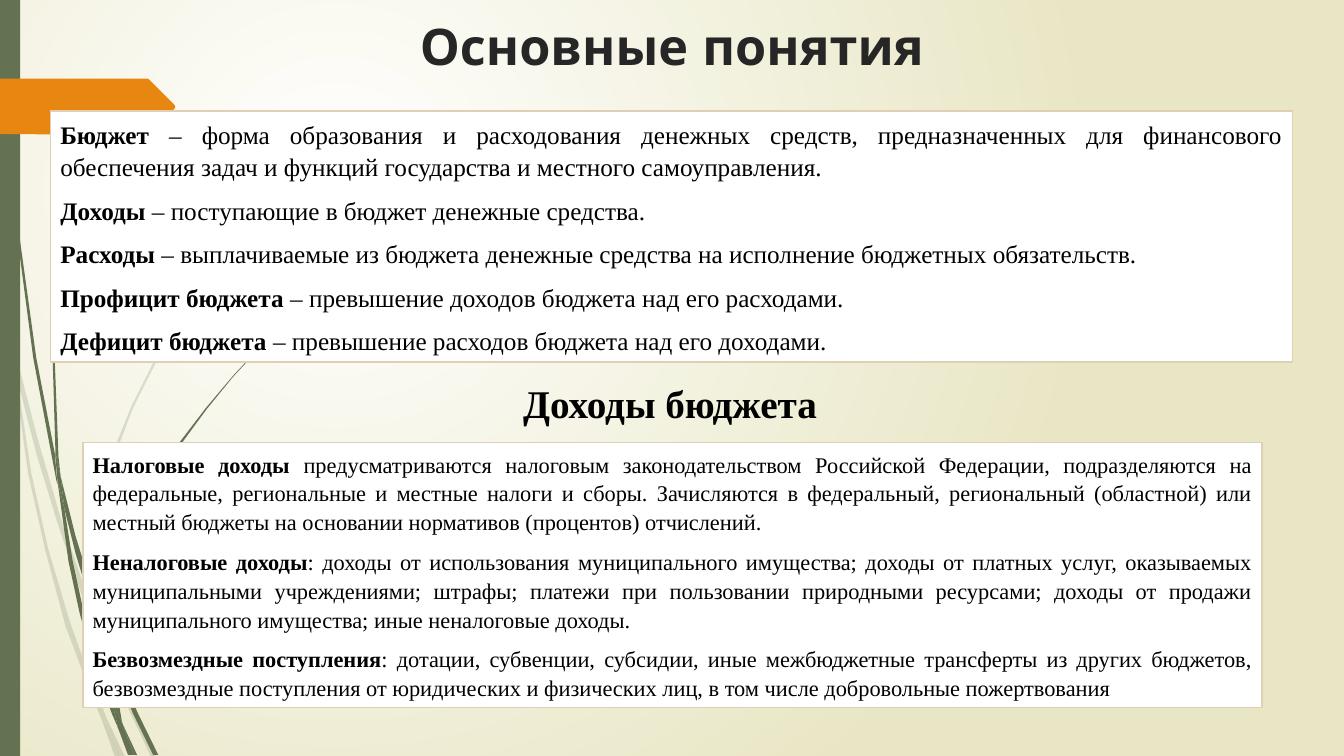
from pptx import Presentation
from pptx.dml.color import RGBColor
from pptx.enum.shapes import MSO_SHAPE
from pptx.enum.text import MSO_ANCHOR, MSO_AUTO_SIZE, PP_ALIGN
from pptx.oxml import parse_xml
from pptx.oxml.ns import nsdecls, qn
from pptx.util import Inches, Pt

COLUMNS, ROWS = 1333, 750

PALE_BLADES = [
    [(11, 350), (9, 322), (0, 282), (0, 299), (10, 344)],
    [(58, 522), (84, 599), (85, 586), (62, 520), (37, 434), (14, 345), (17, 376), (36, 450)],
    [(92, 607), (88, 596), (88, 610), (123, 694), (150, 751), (155, 751), (127, 692)],
    [(119, 751), (124, 751), (105, 711)],
    [(93, 683), (70, 619), (48, 545), (31, 469), (17, 376), (11, 350), (28, 470),
     (45, 546), (65, 621), (92, 693), (101, 714), (99, 707)],
    [(84, 599), (87, 646), (93, 683), (96, 692), (105, 711), (103, 706), (91, 646),
     (88, 610), (88, 608)],
    [(88, 584), (93, 522), (110, 462), (132, 405), (160, 349), (192, 296), (229, 245),
     (268, 198), (290, 175), (312, 154), (312, 153), (289, 175), (268, 197), (228, 244),
     (191, 295), (158, 348), (130, 404), (107, 461), (90, 522), (85, 584), (85, 586), (88, 596)],
    [(101, 714), (114, 751), (119, 751)],
    [(96, 692), (93, 683), (99, 707), (101, 714), (119, 751), (105, 711)],
]

DARK_BLADES = [
    [(7, 110), (17, 233), (33, 355), (56, 477), (57, 481), (55, 457), (55, 453),
     (36, 355), (19, 232), (8, 109), (5, 48), (4, 0), (3, 0), (4, 48)],
    [(88, 592), (106, 645), (106, 633), (106, 631), (93, 590), (75, 532), (60, 472),
     (64, 505), (75, 549)],
    [(113, 649), (110, 641), (111, 656), (132, 708), (152, 749), (157, 749), (136, 706)],
    [(110, 691), (98, 657), (83, 607), (72, 556), (64, 505), (57, 477), (68, 557),
     (79, 608), (93, 659), (111, 708), (117, 722), (116, 717)],
    [(60, 472), (58, 453), (54, 349), (58, 245), (63, 193), (70, 141), (62, 193),
     (56, 245), (52, 349), (55, 449)],
    [(133, 749), (136, 749), (122, 719)],
    [(57, 477), (64, 505), (60, 472), (55, 449), (55, 453)],
    [(111, 633), (115, 592), (125, 552), (140, 513), (158, 476), (180, 440), (205, 406),
     (231, 374), (245, 359), (261, 344), (260, 344), (245, 358), (231, 373), (204, 405),
     (178, 439), (156, 474), (137, 511), (122, 551), (111, 590), (106, 631), (110, 641)],
    [(117, 722), (127, 749), (131, 749)],
    [(106, 645), (110, 691), (116, 706), (122, 719), (121, 716), (111, 656), (109, 651)],
    [(116, 706), (110, 691), (116, 717), (117, 722), (130, 749), (133, 749), (122, 719)],
]

MARKER = [(173, 108), (148, 133), (146, 134), (136, 134), (0, 133), (0, 78), (136, 78),
          (146, 78), (148, 79), (173, 104), (174, 106)]

CONCEPTS = [
    ("Бюджет", " – форма образования и расходования денежных средств, предназначенных для "
     "финансового обеспечения задач и функций государства и местного самоуправления."),
    ("Доходы", " – поступающие в бюджет денежные средства."),
    ("Расходы", " – выплачиваемые из бюджета денежные средства на исполнение бюджетных обязательств."),
    ("Профицит бюджета ", "– превышение доходов бюджета над его расходами."),
    ("Дефицит бюджета ", "– превышение расходов бюджета над его доходами."),
]

INCOME_KINDS = [
    ("Налоговые доходы ", "предусматриваются налоговым законодательством Российской Федерации, "
     "подразделяются на федеральные, региональные и местные налоги и сборы. Зачисляются в "
     "федеральный, региональный (областной) или местный бюджеты на основании нормативов "
     "(процентов) отчислений."),
    ("Неналоговые доходы", ": доходы от использования муниципального имущества; доходы от платных "
     "услуг, оказываемых муниципальными учреждениями; штрафы; платежи при пользовании природными "
     "ресурсами; доходы от продажи муниципального имущества; иные неналоговые доходы."),
    ("Безвозмездные поступления", ": дотации, субвенции, субсидии, иные межбюджетные трансферты из "
     "других бюджетов, безвозмездные поступления от юридических и физических лиц, в том числе "
     "добровольные пожертвования"),
]


def color(value):
    return RGBColor.from_string(value)


class BudgetSlide:
    green, orange, sand, white, black = "647252", "E78712", "E1CFB5", "FFFFFF", "000000"
    title_font, body_font = "Quicksand", "Times New Roman"

    def __init__(self, deck):
        self.cell = deck.slide_width // COLUMNS
        self.page = deck.slides.add_slide(deck.slide_layouts[5])

    def place(self, *cells):
        return [cell * self.cell for cell in cells]

    def paint(self, shape, fill, line=None):
        shape.shadow.inherit = False
        shape.fill.solid()
        shape.fill.fore_color.rgb = color(fill)
        if line:
            shape.line.color.rgb = color(line)
            shape.line.width = Pt(1.25)
        else:
            shape.line.fill.background()

    def style(self, span, size, font, ink, bold=True):
        span.font.size, span.font.name, span.font.bold = Pt(size), font, bold
        span.font.color.rgb = color(ink)

    def background(self, center, edge):
        fill = self.page.background.fill
        fill.gradient()
        for stop, value in zip(fill.gradient_stops, (center, edge)):
            stop.color.rgb = color(value)
        gradient = self.page.element.find(".//" + qn("a:gradFill"))
        gradient.replace(gradient.find(qn("a:lin")), parse_xml(
            f'<a:path {nsdecls("a")} path="circle">'
            '<a:fillToRect l="50000" t="50000" r="100000" b="100000"/></a:path>'))

    def outline(self, shapes, points, fill, opacity=100):
        builder = shapes.build_freeform(*points[0], scale=self.cell)
        builder.add_line_segments(points[1:], close=True)
        shape = builder.convert_to_shape()
        self.paint(shape, fill)
        if opacity < 100:
            tint = shape.element.spPr.find(".//" + qn("a:srgbClr"))
            tint.append(parse_xml(f'<a:alpha {nsdecls("a")} val="{opacity * 1000}"/>'))

    def blades(self, outlines, opacity=100):
        group = self.page.shapes.add_group_shape()
        for points in outlines:
            self.outline(group.shapes, points, self.green, opacity)

    def rectangle(self, cells, fill, line=None):
        box = self.page.shapes.add_shape(MSO_SHAPE.RECTANGLE, *self.place(*cells))
        self.paint(box, fill, line)
        return box

    def title(self, cells, text):
        title = self.page.shapes.title
        self.page.shapes.element.append(title.element)
        title.left, title.top, title.width, title.height = self.place(*cells)
        frame = title.text_frame
        frame.text = text
        frame.auto_size = MSO_AUTO_SIZE.NONE
        frame.vertical_anchor = MSO_ANCHOR.TOP
        para = frame.paragraphs[0]
        para.alignment = PP_ALIGN.CENTER
        self.style(para.runs[0], 36, self.title_font, "262626")

    def definitions(self, cells, entries, size):
        frame = self.rectangle(cells, self.white, self.sand).text_frame
        frame.word_wrap = True
        frame.auto_size = MSO_AUTO_SIZE.SHAPE_TO_FIT_TEXT
        frame.vertical_anchor = MSO_ANCHOR.MIDDLE
        for index, entry in enumerate(entries):
            para = frame.add_paragraph() if index else frame.paragraphs[0]
            para.alignment = PP_ALIGN.JUSTIFY
            para.line_spacing, para.space_after = 1.07, Pt(8)
            for text, bold in zip(entry, (True, False)):
                span = para.add_run()
                span.text = text
                self.style(span, size, self.body_font, self.black, bold)

    def heading(self, cells, text):
        frame = self.page.shapes.add_textbox(*self.place(*cells)).text_frame
        frame.text = text
        frame.word_wrap = False
        frame.auto_size = MSO_AUTO_SIZE.SHAPE_TO_FIT_TEXT
        frame.vertical_anchor = MSO_ANCHOR.MIDDLE
        self.style(frame.paragraphs[0].runs[0], 28, self.body_font, self.black)


def main():
    deck = Presentation()
    deck.slide_width, deck.slide_height = Inches(13.33), Inches(7.5)
    slide = BudgetSlide(deck)
    slide.background("FFFFFF", "E8E6C4")
    slide.blades(PALE_BLADES, 20)
    slide.blades(DARK_BLADES)
    slide.rectangle((0, 0, 20, ROWS), slide.green)
    slide.outline(slide.page.shapes, MARKER, slide.orange)
    slide.title((0, 10, COLUMNS, 91), "Основные понятия")
    slide.definitions((50, 110, 1232, 249), CONCEPTS, 18)
    slide.definitions((82, 439, 1170, 263), INCOME_KINDS, 16)
    slide.heading((509, 371, 315, 57), "Доходы бюджета")
    deck.save("out.pptx")


if __name__ == "__main__":
    main()
